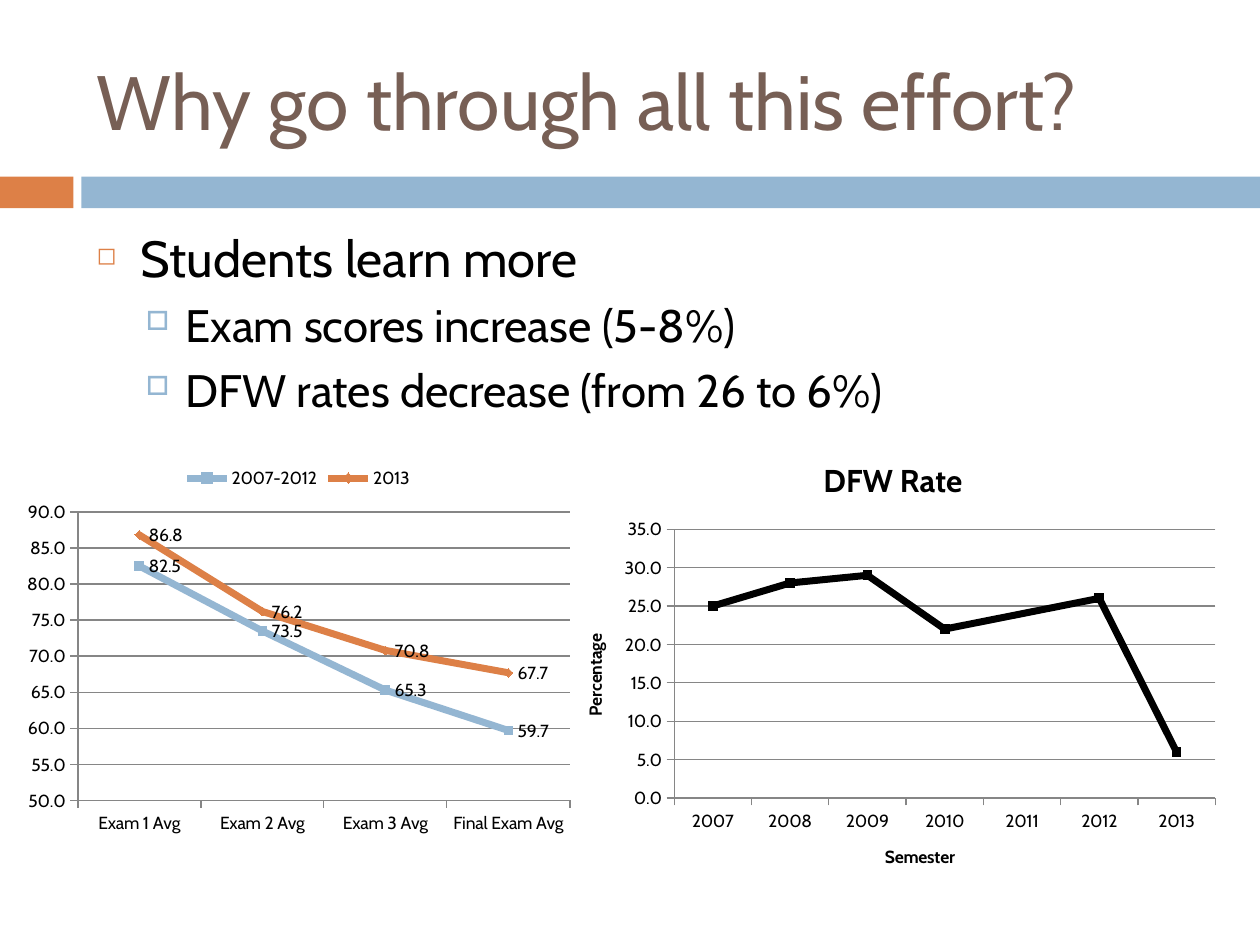
from lxml import etree
from pptx import Presentation
from pptx.chart.data import CategoryChartData
from pptx.dml.color import RGBColor
from pptx.enum.chart import XL_CHART_TYPE, XL_LABEL_POSITION, XL_LEGEND_POSITION, XL_MARKER_STYLE, XL_TICK_MARK
from pptx.enum.shapes import MSO_SHAPE
from pptx.enum.text import MSO_ANCHOR
from pptx.oxml.ns import qn
from pptx.util import Cm, Pt

LINE_MARKERS = XL_CHART_TYPE.LINE_MARKERS
RECTANGLE = MSO_SHAPE.RECTANGLE
MIDDLE = MSO_ANCHOR.MIDDLE
TOP = XL_LEGEND_POSITION.TOP
RIGHT = XL_LABEL_POSITION.RIGHT
OUTSIDE = XL_TICK_MARK.OUTSIDE
SQUARE, DIAMOND = XL_MARKER_STYLE.SQUARE, XL_MARKER_STYLE.DIAMOND
FONT = "Cabin"
COLORS = {"orange": "DD8047", "blue": "94B6D2", "brown": "775F55", "black": "000000", "grey": "868686"}


def color(name):
    return RGBColor.from_string(COLORS[name])


def write(para, text, size, ink="black", bold=False, before=0, bullet=None):
    span = para.add_run()
    span.text = text
    span.font.name = FONT
    span.font.size = Pt(size)
    span.font.bold = bold
    span.font.color.rgb = color(ink)
    if before:
        para.space_before = Pt(before)
    if bullet:
        char, tint, percent, left, hang = bullet
        props = para._p.get_or_add_pPr()
        props.set("marL", str(Cm(left)))
        props.set("indent", str(-Cm(hang)))
        tint_box = etree.SubElement(props, qn("a:buClr"))
        etree.SubElement(tint_box, qn("a:srgbClr"), val=COLORS[tint])
        etree.SubElement(props, qn("a:buSzPct"), val=str(percent * 1000))
        etree.SubElement(props, qn("a:buChar"), char=char)


deck = Presentation()
deck.slide_width, deck.slide_height = Cm(25.4), Cm(19.05)
page = deck.slides.add_slide(deck.slide_layouts[6])

for left, width, fill in [(0, 1.48, "orange"), (1.64, 23.76, "blue")]:
    band = page.shapes.add_shape(RECTANGLE, Cm(left), Cm(3.56), Cm(width), Cm(0.64))
    band.shadow.inherit = False
    band.fill.solid()
    band.fill.fore_color.rgb = color(fill)
    band.line.fill.background()

title_box = page.shapes.add_textbox(Cm(1.7), Cm(0.64), Cm(22.66), Cm(2.74))
title_box.text_frame.word_wrap = True
title_box.text_frame.vertical_anchor = MIDDLE
write(title_box.text_frame.paragraphs[0], "Why go through all this effort?", 44, ink="brown")

body = page.shapes.add_textbox(Cm(1.7), Cm(4.45), Cm(22.66), Cm(4.6)).text_frame
body.word_wrap = True
first = ("◻", "orange", 48, 0.89, 0.89)
second = ("□", "blue", 58, 1.79, 0.8)
points = [
    ("Students learn more", 0, 29, 7, first),
    ("Exam scores increase (5-8%)", 1, 26, 5.5, second),
    ("DFW rates decrease (from 26 to 6%)", 1, 26, 5.5, second),
]
for index, (text, level, size, before, bullet) in enumerate(points):
    para = body.add_paragraph() if index else body.paragraphs[0]
    para.level = level
    write(para, text, size, before=before, bullet=bullet)

charts = [
    {
        "place": (0.3, 9.14, 11.43, 7.82),
        "plot": (1.27, 1.18, 9.92, 5.82),
        "cats": ["Exam 1 Avg", "Exam 2 Avg", "Exam 3 Avg", "Final Exam Avg"],
        "series": [
            ("2007-2012", [82.5, 73.5, 65.3, 59.7], "blue", SQUARE),
            ("2013", [86.8, 76.2, 70.8, 67.7], "orange", DIAMOND),
        ],
        "range": (50, 90),
        "title": None,
        "axis_titles": None,
    },
    {
        "place": (11.23, 8.81, 13.54, 9.22),
        "plot": (2.36, 1.86, 10.91, 5.42),
        "cats": ["2007", "2008", "2009", "2010", "2011", "2012", "2013"],
        "series": [("Series 1", [25, 28, 29, 22, None, 26, 6], "black", SQUARE)],
        "range": (0, 35),
        "title": "DFW Rate",
        "axis_titles": ("Semester", "Percentage"),
    },
]
for item in charts:
    data = CategoryChartData(number_format="0.0")
    data.categories = item["cats"]
    for name, values, ink, marker in item["series"]:
        data.add_series(name, values)
    chart = page.shapes.add_chart(LINE_MARKERS, *map(Cm, item["place"]), data).chart
    chart.font.name = FONT
    chart.font.size = Pt(10)
    chart.font.color.rgb = color("black")

    chart.has_title = item["title"] is not None
    if item["title"]:
        write(chart.chart_title.text_frame.paragraphs[0], item["title"], 18, bold=True)
    chart.has_legend = len(item["series"]) > 1
    if chart.has_legend:
        chart.legend.position = TOP
        chart.legend.include_in_layout = False

    axes = (chart.category_axis, chart.value_axis)
    for axis in axes:
        axis.major_tick_mark = OUTSIDE
        axis.format.line.color.rgb = color("grey")
    chart.value_axis.minimum_scale, chart.value_axis.maximum_scale = item["range"]
    chart.value_axis.major_unit = 5
    chart.value_axis.tick_labels.number_format = "0.0"
    chart.value_axis.tick_labels.number_format_is_linked = False
    chart.value_axis.major_gridlines.format.line.color.rgb = color("grey")
    if item["axis_titles"]:
        for axis, text in zip(axes, item["axis_titles"]):
            write(axis.axis_title.text_frame.paragraphs[0], text, 10, bold=True)

    chart.plots[0].vary_by_categories = False
    for series, (name, values, ink, marker) in zip(chart.plots[0].series, item["series"]):
        series.smooth = False
        series.format.line.color.rgb = color(ink)
        series.format.line.width = Pt(4)
        series.marker.style = marker
        series.marker.size = 5
        series.marker.format.fill.solid()
        series.marker.format.fill.fore_color.rgb = color(ink)
        series.marker.format.line.color.rgb = color(ink)
        if chart.has_legend:
            labels = series.data_labels
            labels.show_value = True
            labels.number_format = "0.0"
            labels.number_format_is_linked = False
            labels.position = RIGHT

    for blanks in chart.element.iter(qn("c:dispBlanksAs")):
        blanks.set("val", "span")
    area = chart.element.find(".//" + qn("c:plotArea"))
    for old in area.findall(qn("c:layout")):
        area.remove(old)
    layout = etree.Element(qn("c:layout"))
    area.insert(0, layout)
    manual = etree.SubElement(layout, qn("c:manualLayout"))
    settings = [("layoutTarget", "inner"), ("xMode", "edge"), ("yMode", "edge")]
    shares = [length / whole for length, whole in zip(item["plot"], item["place"][2:] * 2)]
    for tag, value in settings + list(zip("xywh", shares)):
        etree.SubElement(manual, qn("c:" + tag), val=str(value))

deck.save("out.pptx")
